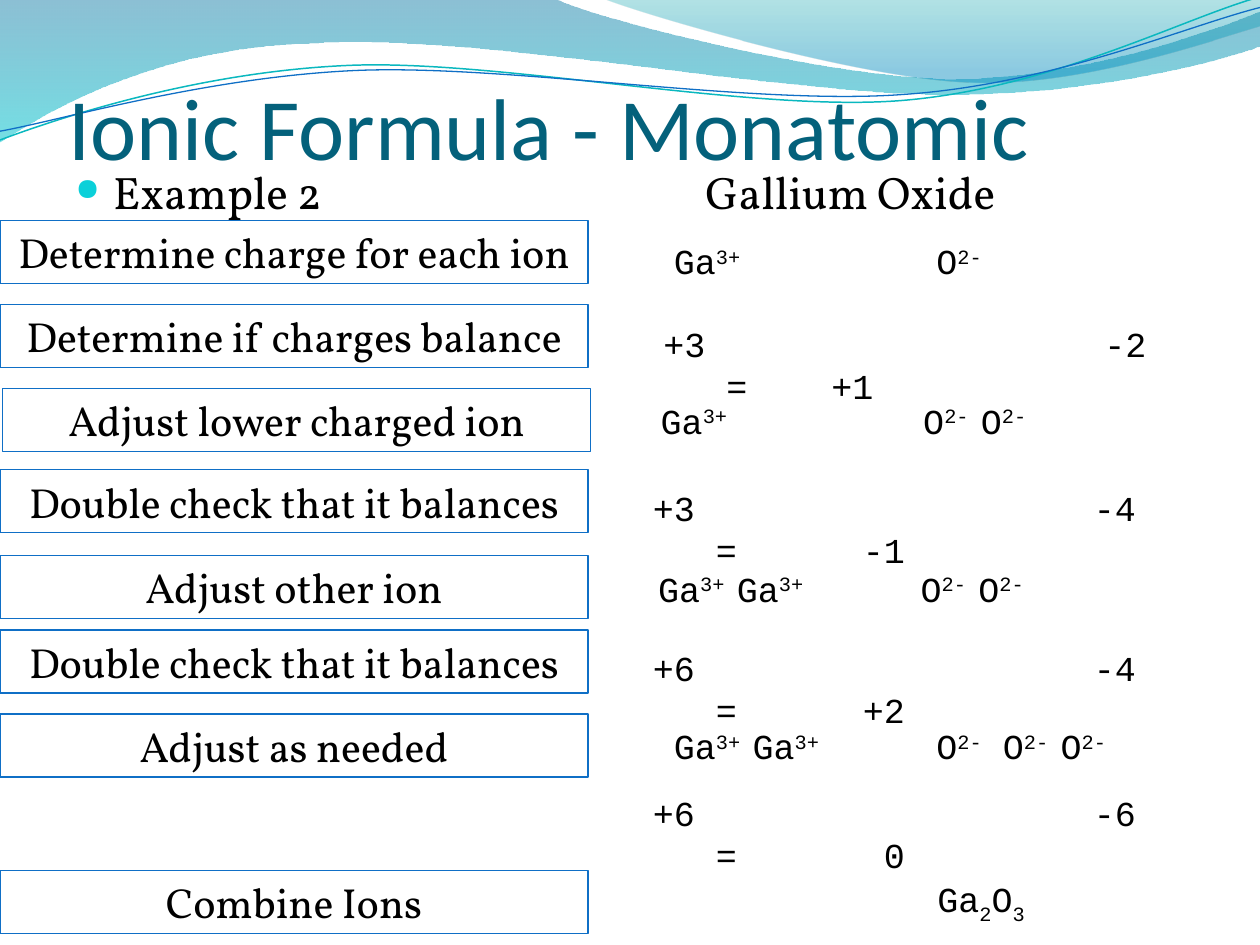
from lxml.etree import SubElement
from pptx import Presentation
from pptx.dml.color import RGBColor
from pptx.enum.shapes import MSO_SHAPE
from pptx.enum.text import MSO_ANCHOR, PP_ALIGN
from pptx.oxml.ns import qn
from pptx.util import Pt

COLORS = {"title": "04617B", "text": "000000", "bullet": "0BD0D9",
          "blue": "0F6FC6", "teal": "0AB8BF"}
HEADING, SERIF, MONO = "Calibri", "Vollkorn", "Courier New"

# Outlines: a pair is a corner, six numbers are a Bézier curve.
# Gradient stops: position, colour, opacity in percent.
WAVES = [
    ([(0, 0), (317, -0.7), (343, 12, 478, 45, 546, 45), (614, 45, 690, 19, 720, 6.5),
      (720.7, 26), (708, 32, 626, 55, 537, 54), (448, 54, 275, 20, 185, 24.5),
      (93, 26, 33, 60, -0.7, 81.4)],
     [(0, "0074A1", 45), (100, "00C6CF", 55)]),
    ([(345, -0.7), (366, 8, 491, 45, 554, 47), (616, 50, 692, 23, 720, 15), (720, 0)],
     [(0, "00A1A9", 30), (80, "008BBF", 45)]),
]
SWOOSHES = [
    ([(0, 80), (34.6, 67, 113.8, 41, 199.4, 37.4), (284.4, 33.8, 427, 64, 513.4, 57.6),
      (599.8, 51, 675.4, 10.8, 718.6, -1.4)], "teal", 0.85),
    ([(0, 75), (33.8, 69, 118, 44, 203.8, 40.3), (290, 36.7, 430, 60.5, 516.2, 54),
      (602, 48.2, 677.5, 15, 720, 4.3)], "blue", 0.75),
]

# Step labels: left, top, wording
STEPS = [
    (0, 126, "Determine charge for each ion"),
    (0, 174, "Determine if charges balance"),
    (1.5, 222, "Adjust lower charged ion"),
    (0, 268.5, "Double check that it balances"),
    (0, 317.5, "Adjust other ion"),
    (0, 360, "Double check that it balances"),
    (0, 408, "Adjust as needed"),
    (0, 497.5, "Combine Ions"),
]

# Ions: left, top, width, pieces that alternate between normal and raised
IONS = [
    (378, 133.5, 66, "Ga|3+"), (528, 133.5, 66, "O|2-"),
    (370.5, 224.5, 66, "Ga|3+"), (520.5, 224.5, 86, "O|2- |O|2-"),
    (369, 320.5, 123, "Ga|3+ |Ga|3+"), (519, 320.5, 99, "O|2- |O|2-"),
    (378, 410.5, 114, "Ga|3+ |Ga|3+"), (528, 410.5, 120, "O|2-| O|2- |O|2-"),
]
FORMULA = (528.5, 498, 168, "Ga|2|O|3")

# Charge sums: left, top, cation charge, anion charge, total, column of total
SUMS = [
    (372, 181, "+3", "-2", "+1", 8),
    (366, 274.5, "+3", "-4", "-1", 10),
    (366, 366, "+6", "-4", "+2", 10),
    (366, 448.5, "+6", "-6", "0", 11),
]
COLUMN = 12  # width of one Courier New character at 20 pt
ANION_COLUMN, EQUALS_COLUMN = 21, 3
ION_HEIGHT = 31.5


def color(value):
    return RGBColor.from_string(COLORS.get(value, value))


def add_outline(page, outline, close):
    """Draw corners and control points as lines, then join each three into a curve."""
    points = [(Pt(x), Pt(y)) for part in outline for x, y in zip(part[::2], part[1::2])]
    builder = page.shapes.build_freeform(*points[0], scale=1.0)
    builder.add_line_segments(points[1:], close=close)
    shape = builder.convert_to_shape()
    shape.shadow.inherit = False
    segments = iter(list(shape._element.iter(qn("a:lnTo"))))
    for part in outline[1:]:
        segment = next(segments)
        if len(part) == 6:
            curve = segment.makeelement(qn("a:cubicBezTo"))
            segment.addprevious(curve)
            for piece in (segment, next(segments), next(segments)):
                curve.append(piece[0])
                piece.getparent().remove(piece)
    return shape


def add_wave(page, outline, stops):
    wave = add_outline(page, outline, True)
    wave.line.fill.background()
    wave.fill.gradient()
    wave.fill.gradient_angle = 270
    for stop, (position, value, _) in zip(wave.fill.gradient_stops, stops):
        stop.position = position / 100
        stop.color.rgb = color(value)
    for element, (_, _, opacity) in zip(wave._element.iter(qn("a:srgbClr")), stops):
        SubElement(element, qn("a:alpha"), val=str(opacity * 1000))


def add_swoosh(page, outline, value, width):
    swoosh = add_outline(page, outline, False)
    swoosh.fill.background()
    swoosh.line.color.rgb = color(value)
    swoosh.line.width = Pt(width)


def add_box(page, left, top, width, height):
    box = page.shapes.add_textbox(Pt(left), Pt(top), Pt(width), Pt(height))
    box.text_frame.word_wrap = True
    return box.text_frame


def set_font(para, name, size, value="text"):
    para.font.name, para.font.size = name, Pt(size)
    para.font.color.rgb = color(value)


def set_tabs(para, *positions):
    tabs = SubElement(para._p.get_or_add_pPr(), qn("a:tabLst"))
    for position in positions:
        SubElement(tabs, qn("a:tab"), pos=str(Pt(position)), algn="l")


def add_title(page):
    frame = add_box(page, 39.3, 12, 648, 90)
    frame.vertical_anchor = MSO_ANCHOR.BOTTOM
    frame.margin_left = frame.margin_right = frame.margin_bottom = 0
    frame.text = "Ionic Formula - Monatomic"
    set_font(frame.paragraphs[0], HEADING, 50, "title")


def add_example(page):
    para = add_box(page, 36, 90, 648, 408).paragraphs[0]
    para.text = "Example 2\tGallium Oxide"
    para.space_before = Pt(5.2)
    properties = para._p.get_or_add_pPr()
    properties.set("marL", str(Pt(21.6)))
    properties.set("indent", str(Pt(-21.6)))
    bullet_color = SubElement(properties, qn("a:buClr"))
    SubElement(bullet_color, qn("a:srgbClr"), val=COLORS["bullet"])
    SubElement(properties, qn("a:buSzPct"), val="68000")
    SubElement(properties, qn("a:buChar"), char="●")
    set_tabs(para, 360)
    set_font(para, SERIF, 26)


def add_step(page, left, top, wording):
    step = page.shapes.add_shape(MSO_SHAPE.RECTANGLE, Pt(left), Pt(top), Pt(336), Pt(36))
    step.shadow.inherit = False
    step.fill.background()
    step.line.color.rgb = color("blue")
    step.line.width = Pt(0.75)
    frame = step.text_frame
    frame.word_wrap = True
    frame.vertical_anchor = MSO_ANCHOR.TOP
    frame.text = wording
    frame.paragraphs[0].alignment = PP_ALIGN.CENTER
    set_font(frame.paragraphs[0], SERIF, 24)


def add_ions(page, left, top, width, pieces, baseline):
    para = add_box(page, left, top, width, ION_HEIGHT).paragraphs[0]
    for index, piece in enumerate(pieces.split("|")):
        span = para.add_run()
        span.text = piece
        if index % 2:
            span._r.get_or_add_rPr().set("baseline", str(baseline * 1000))
    set_font(para, MONO, 20)


def add_sum(page, left, top, cation, anion, total, total_column):
    frame = add_box(page, left, top, 324, ION_HEIGHT)
    frame.text = f"{cation}\t{anion}\n\t=\t{total}"
    columns = [(ANION_COLUMN,), (EQUALS_COLUMN, total_column)]
    for para, stops in zip(frame.paragraphs, columns):
        set_tabs(para, *(COLUMN * stop for stop in stops))
        set_font(para, MONO, 20)


def main():
    deck = Presentation()
    deck.slide_width, deck.slide_height = Pt(720), Pt(540)
    page = deck.slides.add_slide(deck.slide_layouts[6])
    for wave in WAVES:
        add_wave(page, *wave)
    for swoosh in SWOOSHES:
        add_swoosh(page, *swoosh)
    add_title(page)
    add_example(page)
    for step in STEPS:
        add_step(page, *step)
    for ions in IONS:
        add_ions(page, *ions, 30)
    add_ions(page, *FORMULA, -25)
    for charges in SUMS:
        add_sum(page, *charges)
    deck.save("out.pptx")


if __name__ == "__main__":
    main()
